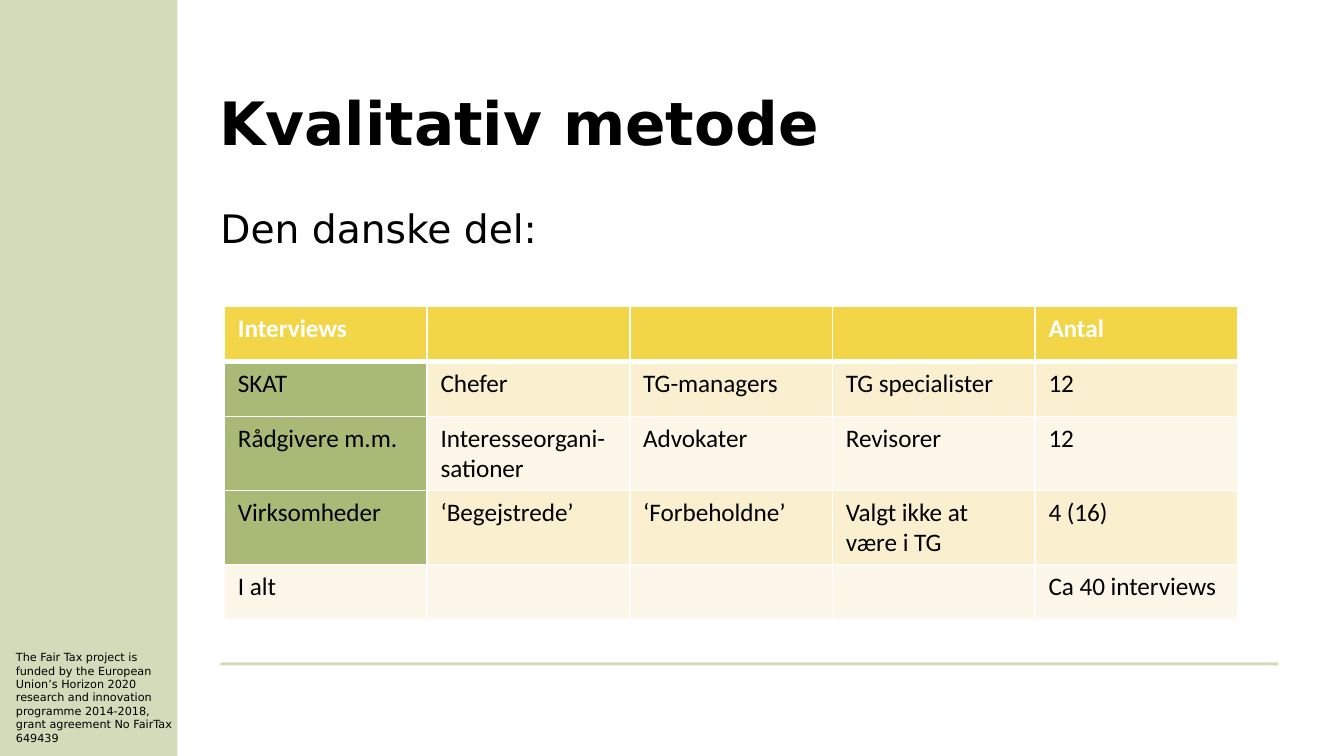
"""Build the slide on the qualitative method and its Danish interviews."""
from dataclasses import dataclass

from lxml.etree import SubElement
from pptx import Presentation
from pptx.dml.color import RGBColor
from pptx.enum.shapes import MSO_CONNECTOR, MSO_SHAPE
from pptx.enum.text import MSO_ANCHOR, MSO_AUTO_SIZE, PP_ALIGN
from pptx.oxml import parse_xml
from pptx.oxml.ns import nsdecls, qn
from pptx.util import Inches, Pt

COLORS = {
    "black": "000000",
    "white": "FFFFFF",
    "green": "A9B976",
    "yellow": "F2D648",
    "band": "FAF0CF",
    "pale": "FCF7E9",
}
HEADING_FONT = "DejaVu Sans"
TABLE_FONT = "Calibri"
SLIDE_WIDTH = 10
SLIDE_HEIGHT = SLIDE_WIDTH * 9 / 16
TABLE_WIDTH = 7.54
ROW_HEIGHT = 0.41
INTERVIEWS = [
    ["Interviews", "", "", "", "Antal"],
    ["SKAT", "Chefer", "TG-managers", "TG specialister", "12"],
    ["Rådgivere m.m.", "Interesseorgani-sationer", "Advokater", "Revisorer", "12"],
    ["Virksomheder", "‘Begejstrede’", "‘Forbeholdne’", "Valgt ikke at være i TG", "4 (16)"],
    ["I alt", "", "", "", "Ca 40 interviews"],
]


@dataclass(frozen=True)
class Area:
    left: float
    top: float
    width: float
    height: float

    def lengths(self) -> list:
        return [Inches(value) for value in (self.left, self.top, self.width, self.height)]


@dataclass(frozen=True)
class Style:
    size: float
    font: str = HEADING_FONT
    color: str = "black"
    bold: bool = False


def rgb(name: str) -> RGBColor:
    return RGBColor.from_string(COLORS[name])


def add_span(para, text: str, style: Style) -> None:
    span = para.add_run()
    span.text = text
    span.font.size = Pt(style.size)
    span.font.name = style.font
    span.font.bold = style.bold
    span.font.color.rgb = rgb(style.color)


def make_half_transparent(shape) -> None:
    for color in shape.element.spPr.iter(qn("a:srgbClr")):
        SubElement(color, qn("a:alpha"), val="50000")


def add_sidebar(page) -> None:
    area = Area(0, 0, 1.32, SLIDE_HEIGHT)
    sidebar = page.shapes.add_shape(MSO_SHAPE.RECTANGLE, *area.lengths())
    sidebar.shadow.inherit = False
    sidebar.fill.solid()
    sidebar.fill.fore_color.rgb = rgb("green")
    sidebar.line.fill.background()
    make_half_transparent(sidebar)


def add_rule(page) -> None:
    rule = page.shapes.add_connector(
        MSO_CONNECTOR.STRAIGHT, Inches(1.64), Inches(4.94), Inches(9.51), Inches(4.94)
    )
    rule.line.color.rgb = rgb("green")
    rule.line.width = Pt(1.5)
    make_half_transparent(rule)
    SubElement(rule.element.spPr, qn("a:effectLst"))


def add_funding_note(page) -> None:
    box = page.shapes.add_textbox(*Area(0.02, 4.79, 1.38, 0.81).lengths())
    box.text_frame.word_wrap = True
    add_span(
        box.text_frame.paragraphs[0],
        "The Fair Tax project is funded by the European Union’s Horizon 2020 research "
        "and innovation programme 2014-2018, grant agreement No FairTax 649439",
        Style(6),
    )


def fill_placeholder(box, area: Area, anchor, text: str, style: Style) -> None:
    box.left, box.top, box.width, box.height = area.lengths()
    frame = box.text_frame
    frame.word_wrap = True
    frame.auto_size = MSO_AUTO_SIZE.NONE
    frame.vertical_anchor = anchor
    para = frame.paragraphs[0]
    properties = para._p.get_or_add_pPr()
    properties.set("marL", "0")
    properties.set("indent", "0")
    SubElement(properties, qn("a:buNone"))
    para.alignment = PP_ALIGN.LEFT
    para.line_spacing = 0.9
    para.space_before = Pt(0)
    add_span(para, text, style)


def set_borders(cell, top: float, bottom: float) -> None:
    properties = cell._tc.get_or_add_tcPr()
    sides = {"lnL": 1, "lnR": 1, "lnT": top, "lnB": bottom}
    for position, (side, width) in enumerate(sides.items()):
        border = parse_xml(
            f'<a:{side} {nsdecls("a")} w="{Pt(width)}"><a:solidFill>'
            f'<a:srgbClr val="{COLORS["white"]}"/></a:solidFill></a:{side}>'
        )
        properties.insert(position, border)


def cell_color(row: int, column: int) -> str:
    if row == 0:
        return "yellow"
    if column == 0 and row < len(INTERVIEWS) - 1:
        return "green"
    return "band" if row % 2 else "pale"


def add_interview_table(page) -> None:
    rows, columns = len(INTERVIEWS), len(INTERVIEWS[0])
    area = Area(1.67, 2.28, TABLE_WIDTH, rows * ROW_HEIGHT)
    table = page.shapes.add_table(rows, columns, *area.lengths()).table
    for row, texts in enumerate(INTERVIEWS):
        is_header = row == 0
        style = Style(13.5, TABLE_FONT, "white" if is_header else "black", is_header)
        for column, text in enumerate(texts):
            cell = table.cell(row, column)
            cell.fill.solid()
            cell.fill.fore_color.rgb = rgb(cell_color(row, column))
            set_borders(cell, top=3 if row == 1 else 1, bottom=3 if is_header else 1)
            if text:
                add_span(cell.text_frame.paragraphs[0], text, style)


def main() -> None:
    deck = Presentation()
    deck.slide_width, deck.slide_height = Inches(SLIDE_WIDTH), Inches(SLIDE_HEIGHT)
    page = deck.slides.add_slide(deck.slide_layouts[1])
    add_sidebar(page)
    add_rule(page)
    add_funding_note(page)
    fill_placeholder(
        page.shapes.title, Area(1.53, 0.65, 7.98, 0.58), MSO_ANCHOR.MIDDLE,
        "Kvalitativ metode", Style(32, bold=True),
    )
    fill_placeholder(
        page.placeholders[1], Area(1.54, 1.51, 7.97, 3.3), MSO_ANCHOR.TOP,
        "Den danske del:", Style(21),
    )
    add_interview_table(page)
    deck.save("out.pptx")


if __name__ == "__main__":
    main()
